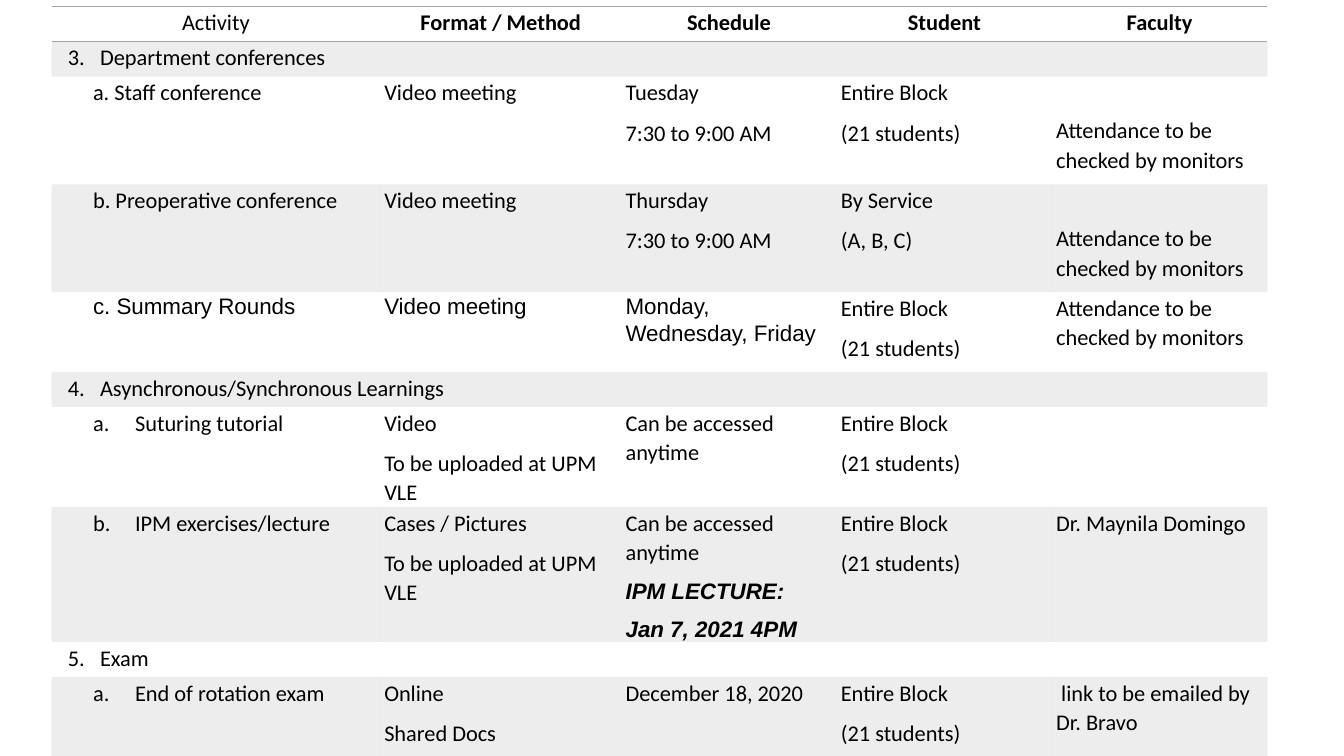
from dataclasses import dataclass

from lxml import etree
from pptx import Presentation
from pptx.dml.color import RGBColor
from pptx.enum import text
from pptx.oxml import ns
from pptx.table import Table, _Cell
from pptx.util import Pt

BLACK = "000000"
GRAY = "A5A5A5"
NO_STYLE = "{2D5ABB26-0587-4C30-8999-92F81FD0307C}"
COLUMN_WIDTHS = (234.6, 172.4, 153.8, 153.8, 153.8)


@dataclass(frozen=True)
class Line:
    words: str
    font: str = "Calibri"
    bold: bool = False
    italic: bool = False
    indent: float = 0
    hang: float = 0
    centered: bool = False


@dataclass(frozen=True)
class Entry:
    lines: tuple[Line, ...] = ()
    top: float = 0.7


@dataclass(frozen=True)
class Row:
    height: float
    entries: tuple[Entry, ...]
    section: bool = False
    edges: tuple[str, ...] = ()


def plain(*words: str, font: str = "Calibri", top: float = 0.7) -> Entry:
    return Entry(tuple(Line(part, font) for part in words), top)


def heading(words: str, bold: bool = True) -> Entry:
    return Entry((Line(words, bold=bold, centered=True),))


def section(words: str) -> Row:
    return Row(25, (Entry((Line(words, indent=8.6, hang=23),)),), section=True)


def activity(words: str, hang: float = 0, font: str = "Calibri") -> Entry:
    return Entry((Line(words, font, indent=26.6, hang=hang),))


def color(code: str) -> RGBColor:
    return RGBColor.from_string(code)


BLOCK = plain("Entire Block", "(21 students)")
MONITORS = "Attendance to be checked by monitors"
LOWERED_MONITORS = plain(MONITORS, top=28)
UPLOAD = "To be uploaded at UPM VLE"
ANYTIME = "Can be accessed anytime"
MEETING = "Video meeting"
HOURS = "7:30 to 9:00 AM"

ROWS = (
    Row(25, (heading("Activity", bold=False), heading("Format / Method"),
             heading("Schedule"), heading("Student"), heading("Faculty")),
        edges=("a:lnT", "a:lnB")),
    section("3.\tDepartment conferences"),
    Row(77, (activity("a. Staff conference"), plain(MEETING),
             plain("Tuesday", HOURS), BLOCK, LOWERED_MONITORS)),
    Row(77, (activity("b. Preoperative conference"), plain(MEETING),
             plain("Thursday", HOURS), plain("By Service", "(A, B, C)"),
             LOWERED_MONITORS)),
    Row(57, (activity("c. Summary Rounds", font="Arial"),
             plain(MEETING, font="Arial"),
             plain("Monday, Wednesday, Friday", font="Arial"), BLOCK,
             plain(MONITORS))),
    section("4.\tAsynchronous/Synchronous Learnings"),
    Row(59, (activity("a.\tSuturing tutorial", 30), plain("Video", UPLOAD),
             plain(ANYTIME), BLOCK, Entry())),
    Row(59, (activity("b.\tIPM exercises/lecture", 30),
             plain("Cases / Pictures", UPLOAD),
             Entry((Line(ANYTIME),
                    Line("IPM LECTURE:", "Arial", True, True),
                    Line("Jan 7, 2021 4PM", "Arial", True, True))),
             BLOCK, plain("Dr. Maynila Domingo"))),
    section("5.\tExam"),
    Row(59, (activity("a.\tEnd of rotation exam", 30),
             plain("Online", "Shared Docs"), plain("December 18, 2020"), BLOCK,
             plain(" link to be emailed by Dr. Bravo")),
        edges=("a:lnB",)),
)


def shade(cell: _Cell) -> None:
    cell.fill.solid()
    cell.fill.fore_color.rgb = color(GRAY)
    tint = cell._tc.tcPr.find(".//" + ns.qn("a:srgbClr"))
    etree.SubElement(tint, ns.qn("a:alpha"), val="20000")


def rule(cell: _Cell, edges: tuple[str, ...]) -> None:
    for position, edge in enumerate(edges):
        border = etree.Element(ns.qn(edge), w=str(Pt(1)))
        ink = etree.SubElement(border, ns.qn("a:solidFill"))
        etree.SubElement(ink, ns.qn("a:srgbClr"), val=GRAY)
        cell._tc.get_or_add_tcPr().insert(position, border)


def write(cell: _Cell, entry: Entry) -> None:
    cell.margin_left = cell.margin_right = Pt(3)
    cell.margin_top, cell.margin_bottom = Pt(entry.top), Pt(0)
    for index, line in enumerate(entry.lines):
        frame = cell.text_frame
        paragraph = frame.add_paragraph() if index else frame.paragraphs[0]
        paragraph.text = line.words
        paragraph.line_spacing = 1.07
        paragraph.space_after = Pt(8)
        if line.centered:
            paragraph.alignment = text.PP_ALIGN.CENTER
        properties = paragraph._p.get_or_add_pPr()
        properties.set("marL", str(Pt(line.indent + line.hang)))
        properties.set("indent", str(Pt(-line.hang)))
        font = paragraph.font
        font.name, font.size = line.font, Pt(16)
        font.bold, font.italic = line.bold, line.italic
        font.color.rgb = color(BLACK)


def fill_schedule(schedule: Table) -> None:
    for column, width in zip(schedule.columns, COLUMN_WIDTHS):
        column.width = Pt(width)
    for index, row in enumerate(ROWS):
        schedule.rows[index].height = Pt(row.height)
        cells = list(schedule.rows[index].cells)
        if row.section:
            cells[0].merge(cells[-1])
        for cell in cells:
            if index % 2:
                shade(cell)
            else:
                cell.fill.background()
            rule(cell, row.edges)
        for cell, entry in zip(cells, row.entries):
            write(cell, entry)


def main() -> None:
    deck = Presentation()
    deck.slide_width, deck.slide_height = Pt(960), Pt(540)
    slide = deck.slides.add_slide(deck.slide_layouts[6])
    schedule = slide.shapes.add_table(
        len(ROWS), len(COLUMN_WIDTHS), Pt(36.9), Pt(4.7), Pt(868.4), Pt(538)
    ).table
    schedule.first_row = schedule.horz_banding = False
    schedule._tbl.tblPr.find(ns.qn("a:tableStyleId")).text = NO_STYLE
    fill_schedule(schedule)
    deck.save("out.pptx")


if __name__ == "__main__":
    main()
